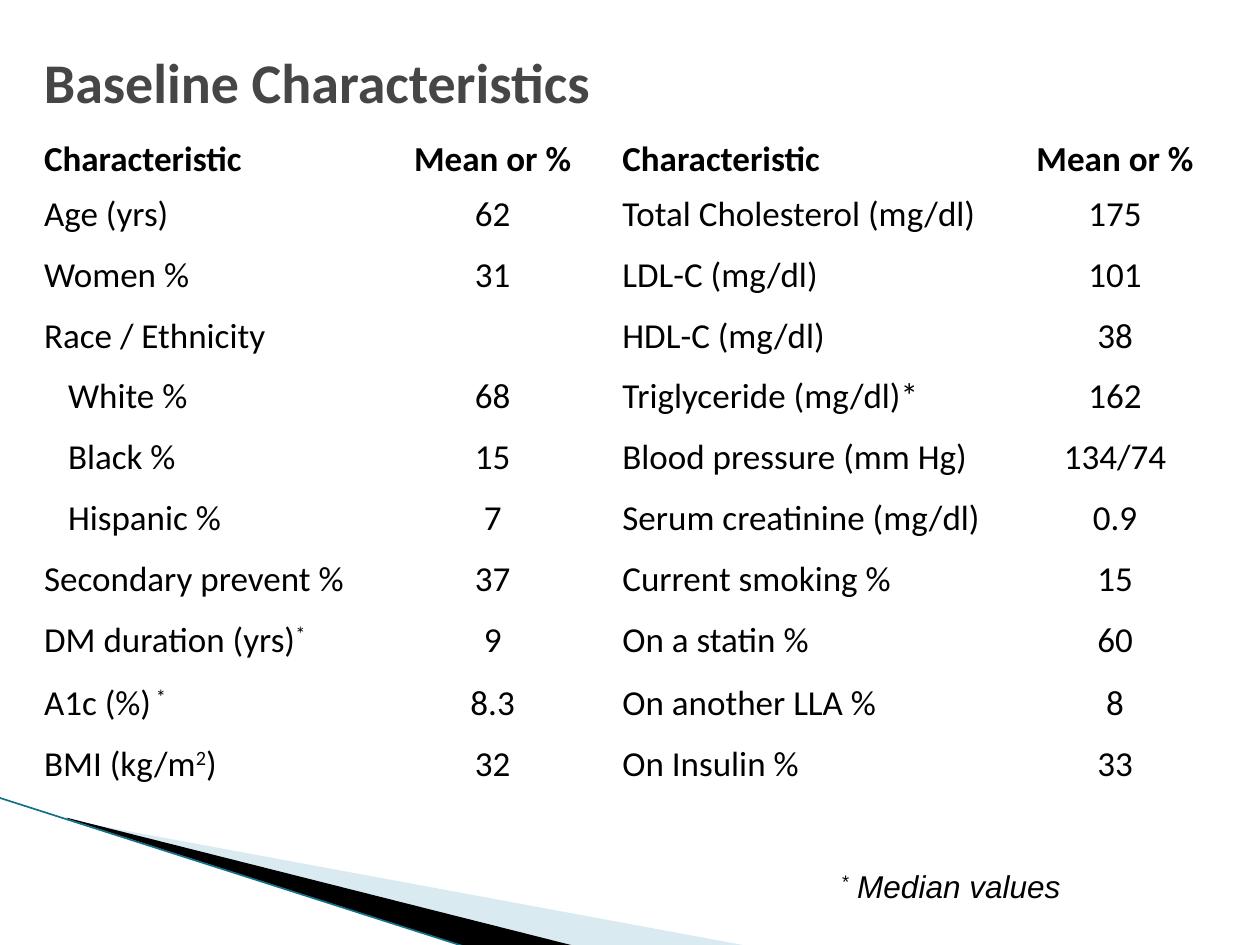
from lxml.etree import SubElement
from pptx import Presentation
from pptx.dml.color import RGBColor
from pptx.enum.shapes import MSO_CONNECTOR
from pptx.enum.text import MSO_ANCHOR, MSO_AUTO_SIZE, PP_ALIGN
from pptx.oxml.ns import qn
from pptx.util import Inches, Pt

# Content: text between ^ marks is superscript
TITLE = "Baseline Characteristics"
FOOTNOTE = "^*^ Median values"
HEADER = ("Characteristic", "Mean or %") * 2
ROWS = [
    ("Age (yrs)", "62", "Total Cholesterol (mg/dl)", "175"),
    ("Women %", "31", "LDL-C (mg/dl)", "101"),
    ("Race / Ethnicity", "", "HDL-C (mg/dl)", "38"),
    ("White %", "68", "Triglyceride (mg/dl)*", "162"),
    ("Black %", "15", "Blood pressure (mm Hg)", "134/74"),
    ("Hispanic %", "7", "Serum creatinine (mg/dl)", "0.9"),
    ("Secondary prevent %", "37", "Current smoking %", "15"),
    ("DM duration (yrs)^*^", "9", "On a statin %", "60"),
    ("A1c (%)^ *^", "8.3", "On another LLA %", "8"),
    ("BMI (kg/m^2^)", "32", "On Insulin %", "33"),
]
ETHNIC_GROUPS = {"White %", "Black %", "Hispanic %"}
COLUMN_WIDTHS = (2.73, 1.86, 3.11, 1.8)
TABLE_HEIGHT, DURATION_ROW, DURATION_HEIGHT = 5.33, 8, 0.5
ROW_HEIGHT = (TABLE_HEIGHT - DURATION_HEIGHT) / len(ROWS)
SUB_ITEM_MARGIN = 0.29

# Corner decoration: outline, colour, opacity in percent
WEDGES = [
    ([(0.55, 6.51), (5.95, 7.51), (4.56, 7.51), (0.55, 6.5)], "A0CBDC", 40),
    ([(0.53, 6.49), (4.57, 7.51), (3.72, 7.52), (0.54, 6.5)], "000000", 100),
]
EDGE_START, EDGE_END, EDGE_COLOUR = (-0.01, 6.33), (3.71, 7.52), "12708A"

TITLE_FORMAT = {"name": "Calibri", "size": Pt(32), "bold": True}
HEADER_FORMAT = {"name": "Calibri", "size": Pt(20), "bold": True}
BODY_FORMAT = {"name": "Calibri", "size": Pt(20), "bold": False}
FOOTNOTE_FORMAT = {"name": "Arial", "size": Pt(18), "italic": True}


def rgb(value):
    return RGBColor.from_string(value)


def apply_format(font, values, colour):
    for name, value in values.items():
        setattr(font, name, value)
    font.color.rgb = rgb(colour)


def write(paragraph, text, values, colour="000000"):
    apply_format(paragraph.font, values, colour)
    for index, piece in enumerate(text.split("^")):
        if piece:
            run = paragraph.add_run()
            run.text = piece
            apply_format(run.font, values, colour)
            if index % 2:
                run.font._element.set("baseline", "30000")


def set_borders(cell, widths):
    properties = cell._tc.get_or_add_tcPr()
    for position, (side, points) in enumerate(widths.items()):
        line = properties.makeelement(qn(f"a:ln{side}"), {"w": str(Pt(points))})
        fill = SubElement(line, qn("a:solidFill"))
        SubElement(fill, qn("a:srgbClr"), val="FFFFFF")
        properties.insert(position, line)


def add_wedge(slide, points, colour, opacity):
    start, *others = [(Inches(x), Inches(y)) for x, y in points]
    builder = slide.shapes.build_freeform(*start)
    builder.add_line_segments(others, close=True)
    wedge = builder.convert_to_shape()
    wedge.shadow.inherit = False
    wedge.fill.solid()
    wedge.fill.fore_color.rgb = rgb(colour)
    wedge.line.fill.background()
    if opacity < 100:
        tint = wedge._element.spPr.find(qn("a:solidFill"))[0]
        SubElement(tint, qn("a:alpha"), val=str(opacity * 1000))


def add_characteristics(slide):
    grid = [HEADER, *ROWS]
    table = slide.shapes.add_table(
        len(grid), len(HEADER), Inches(0.25), Inches(1),
        Inches(sum(COLUMN_WIDTHS)), Inches(TABLE_HEIGHT)).table
    table.horz_banding = False
    for column, width in zip(table.columns, COLUMN_WIDTHS):
        column.width = Inches(width)
    for r, texts in enumerate(grid):
        table.rows[r].height = Inches(
            DURATION_HEIGHT if r == DURATION_ROW else ROW_HEIGHT)
        for c, text in enumerate(texts):
            cell = table.cell(r, c)
            cell.fill.background()
            cell.vertical_anchor = MSO_ANCHOR.TOP if r else MSO_ANCHOR.BOTTOM
            if text in ETHNIC_GROUPS:
                cell.margin_left = Inches(SUB_ITEM_MARGIN)
            paragraph = cell.text_frame.paragraphs[0]
            paragraph.alignment = PP_ALIGN.CENTER if c % 2 else PP_ALIGN.LEFT
            write(paragraph, text, BODY_FORMAT if r else HEADER_FORMAT)
            set_borders(cell, {"L": 1, "R": 1, "T": 3 if r == 1 else 1,
                               "B": 1 if r else 3})


def add_text(slide, box, text, values, colour, anchor, wrap):
    frame = slide.shapes.add_textbox(*map(Inches, box)).text_frame
    frame.word_wrap = wrap
    frame.vertical_anchor = anchor
    frame.auto_size = MSO_AUTO_SIZE.NONE if wrap else MSO_AUTO_SIZE.SHAPE_TO_FIT_TEXT
    write(frame.paragraphs[0], text, values, colour)


def main():
    deck = Presentation()
    deck.slide_width, deck.slide_height = Inches(10), Inches(7.5)
    slide = deck.slides.add_slide(deck.slide_layouts[6])

    # Corner decoration
    for wedge in WEDGES:
        add_wedge(slide, *wedge)
    edge = slide.shapes.add_connector(
        MSO_CONNECTOR.STRAIGHT, *map(Inches, EDGE_START + EDGE_END))
    edge.line.color.rgb = rgb(EDGE_COLOUR)
    edge.line.width = Pt(0.95)
    SubElement(edge._element.spPr, qn("a:effectLst"))

    # Table, title and footnote
    add_characteristics(slide)
    add_text(slide, (0.25, 0.25, 8.92, 0.78), TITLE, TITLE_FORMAT, "464646",
             MSO_ANCHOR.MIDDLE, True)
    add_text(slide, (6.58, 6.83, 1.96, 0.4), FOOTNOTE, FOOTNOTE_FORMAT, "000000",
             MSO_ANCHOR.TOP, False)
    deck.save("out.pptx")


if __name__ == "__main__":
    main()
